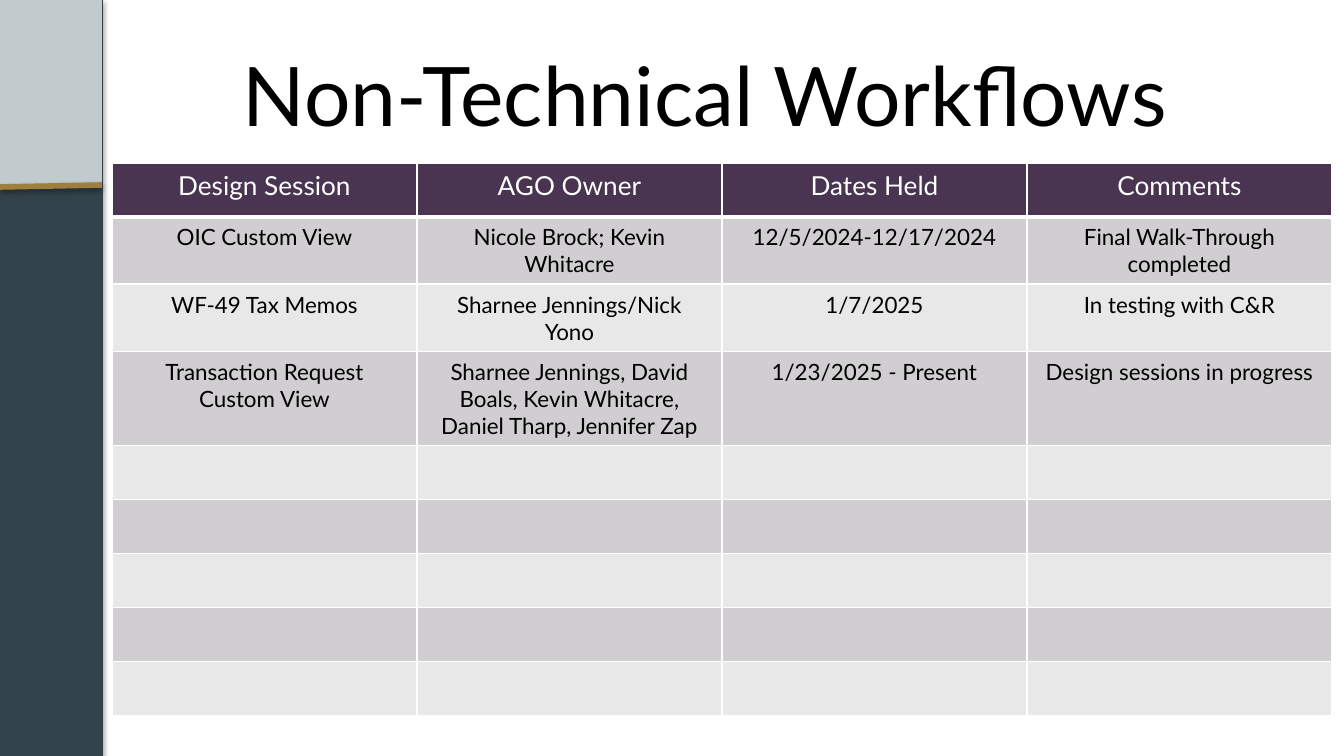
import lxml.etree
import pptx
import pptx.dml.color
import pptx.enum.shapes
import pptx.enum.text
import pptx.oxml.ns
import pptx.util

EMU_PER_PX = 914400 / 134.4
SLIDE_WIDTH, SLIDE_HEIGHT = 1344, 756
SIDEBAR_WIDTH = 102
COLUMN_WIDTH, ROW_HEIGHT = 305, 54
FONT = "Lato"
COLORS = {
    "sidebar": "33434B",
    "sidebar_top": "C1CACC",
    "accent": "9E7F3D",
    "header": "493451",
    "odd_row": "D0CED0",
    "even_row": "E9E8E9",
    "white": "FFFFFF",
    "black": "000000",
}
HEADINGS = ("Design Session", "AGO Owner", "Dates Held", "Comments")
SESSIONS = (
    ("OIC Custom View", "Nicole Brock; Kevin Whitacre",
     "12/5/2024-12/17/2024", "Final Walk-Through completed"),
    ("WF-49 Tax Memos", "Sharnee Jennings/Nick Yono",
     "1/7/2025", "In testing with C&R"),
    ("Transaction Request Custom View",
     "Sharnee Jennings, David Boals, Kevin Whitacre, Daniel Tharp, Jennifer Zap",
     "1/23/2025 - Present", "Design sessions in progress"),
)
EMPTY_ROWS = 5


def px(length):
    return pptx.util.Emu(round(length * EMU_PER_PX))


def rgb(color):
    return pptx.dml.color.RGBColor.from_string(COLORS[color])


def add_child(parent, tag, **attributes):
    child = lxml.etree.SubElement(parent, pptx.oxml.ns.qn(tag))
    for key, value in attributes.items():
        child.set(key, str(value))
    return child


def add_shadow(element, blur, distance, opacity):
    """Cast a black shadow straight down; blur and distance are in points."""
    properties = element._element.spPr
    effects = properties.find(pptx.oxml.ns.qn("a:effectLst"))
    if effects is None:
        effects = add_child(properties, "a:effectLst")
    shadow = add_child(effects, "a:outerShdw", blurRad=pptx.util.Pt(blur),
                       dist=pptx.util.Pt(distance), dir=90 * 60000,
                       algn="ctr", rotWithShape=0)
    tint = add_child(shadow, "a:srgbClr", val=COLORS["black"])
    add_child(tint, "a:alpha", val=opacity * 1000)


def add_panel(slide, height, color):
    panel = slide.shapes.add_shape(
        pptx.enum.shapes.MSO_SHAPE.RECTANGLE, 0, 0, px(SIDEBAR_WIDTH), px(height))
    panel.shadow.inherit = False
    panel.fill.solid()
    panel.fill.fore_color.rgb = rgb(color)
    panel.line.fill.background()
    return panel


def add_sidebar(slide):
    sidebar = add_panel(slide, SLIDE_HEIGHT, "sidebar")
    sidebar.line.color.rgb = rgb("sidebar")
    sidebar.line.width = pptx.util.Pt(0.75)
    add_shadow(sidebar, 3.1, 1.8, 35)

    add_panel(slide, 185, "sidebar_top")

    accent = slide.shapes.add_connector(
        pptx.enum.shapes.MSO_CONNECTOR.STRAIGHT,
        0, px(187), px(SIDEBAR_WIDTH), px(185))
    accent.line.color.rgb = rgb("accent")
    accent.line.width = pptx.util.Pt(3)
    add_shadow(accent, 3.1, 1.6, 38)


def style_text(frame, size, color):
    paragraph = frame.paragraphs[0]
    paragraph.alignment = pptx.enum.text.PP_ALIGN.CENTER
    paragraph.font.name = FONT
    paragraph.font.size = pptx.util.Pt(size)
    paragraph.font.color.rgb = rgb(color)


def add_title(slide, text):
    title = slide.shapes.add_textbox(px(133), px(31), px(1144), px(126))
    frame = title.text_frame
    frame.word_wrap = True
    frame.vertical_anchor = pptx.enum.text.MSO_ANCHOR.MIDDLE
    frame.text = text
    style_text(frame, 44, "black")


def set_borders(cell, top, bottom):
    """Draw white cell borders; they must come before the cell's fill."""
    properties = cell._tc.get_or_add_tcPr()
    for side, width in (("L", 1), ("R", 1), ("T", top), ("B", bottom)):
        border = add_child(properties, f"a:ln{side}", w=pptx.util.Pt(width))
        fill = add_child(border, "a:solidFill")
        add_child(fill, "a:srgbClr", val=COLORS["white"])


def add_sessions_table(slide):
    blank = ("",) * len(HEADINGS)
    rows = (HEADINGS, *SESSIONS, *[blank] * EMPTY_ROWS)
    table = slide.shapes.add_table(
        len(rows), len(HEADINGS), px(112), px(163),
        px(COLUMN_WIDTH * len(HEADINGS)), px(ROW_HEIGHT * len(rows))).table
    for column in table.columns:
        column.width = px(COLUMN_WIDTH)

    for row_index, texts in enumerate(rows):
        is_header = row_index == 0
        band = "odd_row" if row_index % 2 else "even_row"
        table.rows[row_index].height = px(ROW_HEIGHT)
        for column_index, text in enumerate(texts):
            cell = table.cell(row_index, column_index)
            set_borders(cell, top=3 if row_index == 1 else 1,
                        bottom=3 if is_header else 1)
            cell.fill.solid()
            cell.fill.fore_color.rgb = rgb("header" if is_header else band)
            cell.text = text
            style_text(cell.text_frame, 14 if is_header else 12,
                       "white" if is_header else "black")
            cell.text_frame.paragraphs[0].font.bold = False


def main():
    presentation = pptx.Presentation()
    presentation.slide_width = px(SLIDE_WIDTH)
    presentation.slide_height = px(SLIDE_HEIGHT)
    slide = presentation.slides.add_slide(presentation.slide_layouts[6])

    add_sidebar(slide)
    add_title(slide, "Non-Technical Workflows")
    add_sessions_table(slide)

    presentation.save("out.pptx")


if __name__ == "__main__":
    main()
